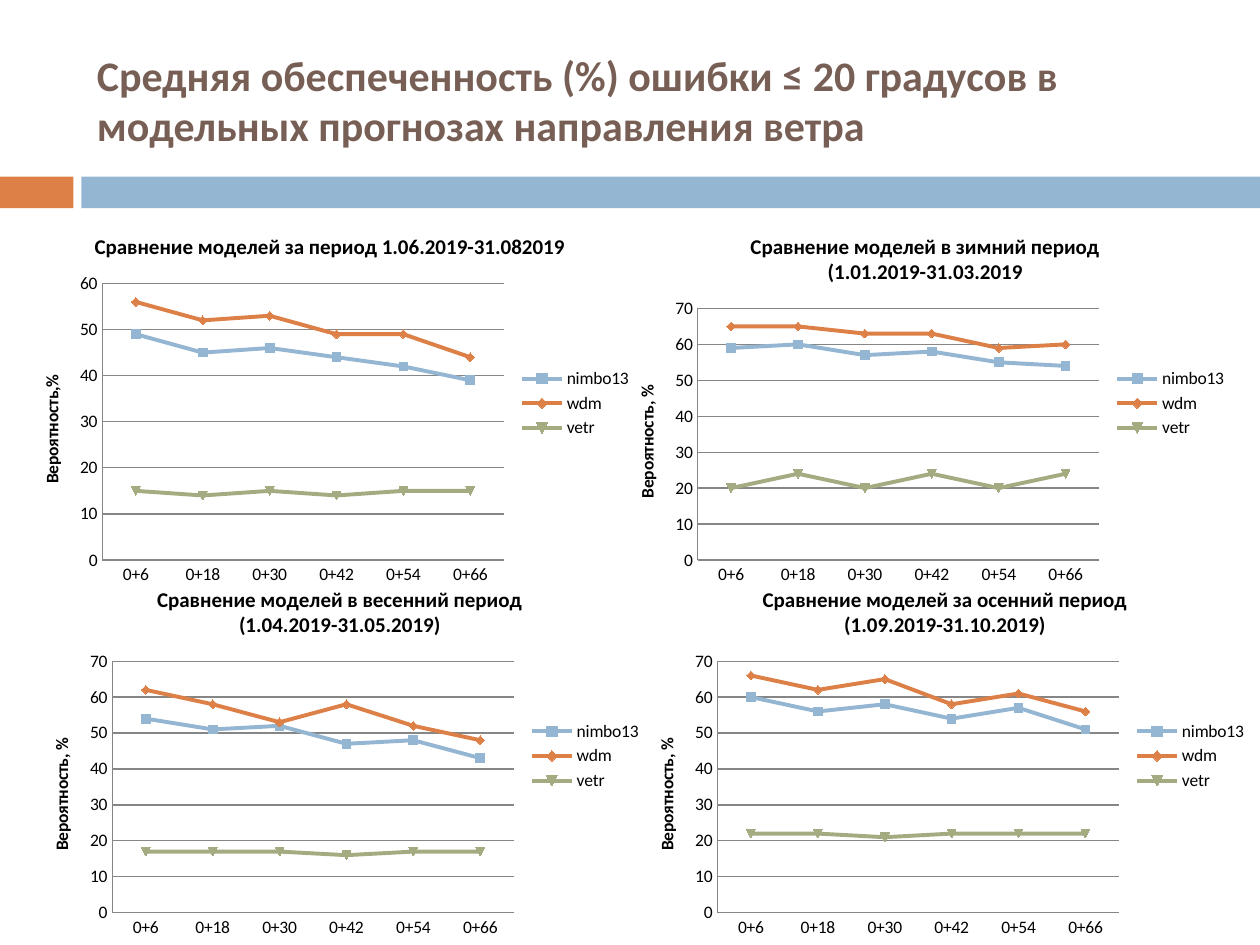
"""Builds a slide comparing wind direction forecasts of three models by season."""
import pptx
import pptx.chart.data
import pptx.dml.color
import pptx.enum.chart
import pptx.enum.shapes
import pptx.enum.text
import pptx.util

COLORS = {
    "title": "775F55",
    "text": "000000",
    "line": "868686",
    "accent": "DD8047",
    "band": "94B6D2",
    "nimbo13": "94B6D2",
    "wdm": "DD8047",
    "vetr": "A5AB81",
}
HOURS = ["0+6", "0+18", "0+30", "0+42", "0+54", "0+66"]
MODELS = ["nimbo13", "wdm", "vetr"]
CHARTS = [
    (0.3, 4.32, "Сравнение моделей за период 1.06.2019-31.082019",
     "Вероятность,%", 60,
     [[49, 45, 46, 44, 42, 39], [56, 52, 53, 49, 49, 44], [15, 14, 15, 14, 15, 15]]),
    (12.3, 4.32, "Сравнение моделей в зимний период\n(1.01.2019-31.03.2019",
     "Вероятность, %", 70,
     [[59, 60, 57, 58, 55, 54], [65, 65, 63, 63, 59, 60], [20, 24, 20, 24, 20, 24]]),
    (0.5, 11.43, "Сравнение моделей в весенний период\n(1.04.2019-31.05.2019)",
     "Вероятность, %", 70,
     [[54, 51, 52, 47, 48, 43], [62, 58, 53, 58, 52, 48], [17, 17, 17, 16, 17, 17]]),
    (12.7, 11.43, "Сравнение моделей за осенний период\n(1.09.2019-31.10.2019)",
     "Вероятность, %", 70,
     [[60, 56, 58, 54, 57, 51], [66, 62, 65, 58, 61, 56], [22, 22, 21, 22, 22, 22]]),
]


class SlideBuilder:
    font = "Calibri"

    def __init__(self, prs):
        self.s = prs.slides.add_slide(prs.slide_layouts[5])

    def color(self, name):
        return pptx.dml.color.RGBColor.from_string(COLORS[name])

    def box(self, *lengths):
        return [pptx.util.Cm(length) for length in lengths]

    def style(self, font, size, color, bold):
        font.name = self.font
        font.size = pptx.util.Pt(size)
        font.bold = bold
        font.color.rgb = self.color(color)

    def text(self, tf, text, size, color):
        tf.text = text
        for p in tf.paragraphs:
            for r in p.runs:
                self.style(r.font, size, color, True)

    def title(self, text, x, y, w, h):
        sp = self.s.shapes.title
        sp.left, sp.top, sp.width, sp.height = self.box(x, y, w, h)
        tf = sp.text_frame
        self.text(tf, text, 24, "title")
        tf.word_wrap = True
        tf.vertical_anchor = pptx.enum.text.MSO_ANCHOR.MIDDLE
        tf.paragraphs[0].alignment = pptx.enum.text.PP_ALIGN.LEFT

    def bar(self, x, y, w, h, color):
        sp = self.s.shapes.add_shape(
            pptx.enum.shapes.MSO_SHAPE.RECTANGLE, *self.box(x, y, w, h))
        sp.shadow.inherit = False
        sp.fill.solid()
        sp.fill.fore_color.rgb = self.color(color)
        sp.line.fill.background()

    def rule(self, line):
        line.color.rgb = self.color("line")
        line.width = pptx.util.Pt(0.75)

    def chart(self, x, y, title, axis_title, top, rows):
        data = pptx.chart.data.CategoryChartData()
        data.categories = HOURS
        for name, values in zip(MODELS, rows):
            data.add_series(name, values)
        chart = self.s.shapes.add_chart(
            pptx.enum.chart.XL_CHART_TYPE.LINE_MARKERS,
            *self.box(x, y, 12.7, 7.62), data).chart
        self.style(chart.font, 10, "text", False)
        chart.has_title = True
        self.text(chart.chart_title.text_frame, title, 12, "text")
        chart.chart_title.include_in_layout = False
        chart.has_legend = True
        chart.legend.position = pptx.enum.chart.XL_LEGEND_POSITION.RIGHT
        chart.legend.include_in_layout = False

        for axis in (chart.category_axis, chart.value_axis):
            axis.major_tick_mark = pptx.enum.chart.XL_TICK_MARK.NONE
            axis.minor_tick_mark = pptx.enum.chart.XL_TICK_MARK.NONE
            self.rule(axis.format.line)
        axis = chart.value_axis
        axis.minimum_scale, axis.maximum_scale, axis.major_unit = 0, top, 10
        axis.has_major_gridlines = True
        self.rule(axis.major_gridlines.format.line)
        self.text(axis.axis_title.text_frame, axis_title, 10, "text")

        chart.plots[0].vary_by_categories = False
        for series in chart.plots[0].series:
            color = self.color(series.name)
            series.smooth = False
            series.format.line.color.rgb = color
            series.format.line.width = pptx.util.Pt(2.25)
            series.marker.format.fill.solid()
            series.marker.format.fill.fore_color.rgb = color
            series.marker.format.line.color.rgb = color


def main():
    prs = pptx.Presentation()
    prs.slide_width, prs.slide_height = pptx.util.Cm(25.4), pptx.util.Cm(19.05)
    slide = SlideBuilder(prs)
    slide.bar(0, 3.56, 1.48, 0.64, "accent")
    slide.bar(1.64, 3.56, 23.76, 0.64, "band")
    slide.title("Средняя обеспеченность (%) ошибки ≤ 20 градусов в "
                "модельных прогнозах направления ветра", 1.7, 0.64, 22.66, 2.74)
    for chart in CHARTS:
        slide.chart(*chart)
    prs.save("out.pptx")


if __name__ == "__main__":
    main()
